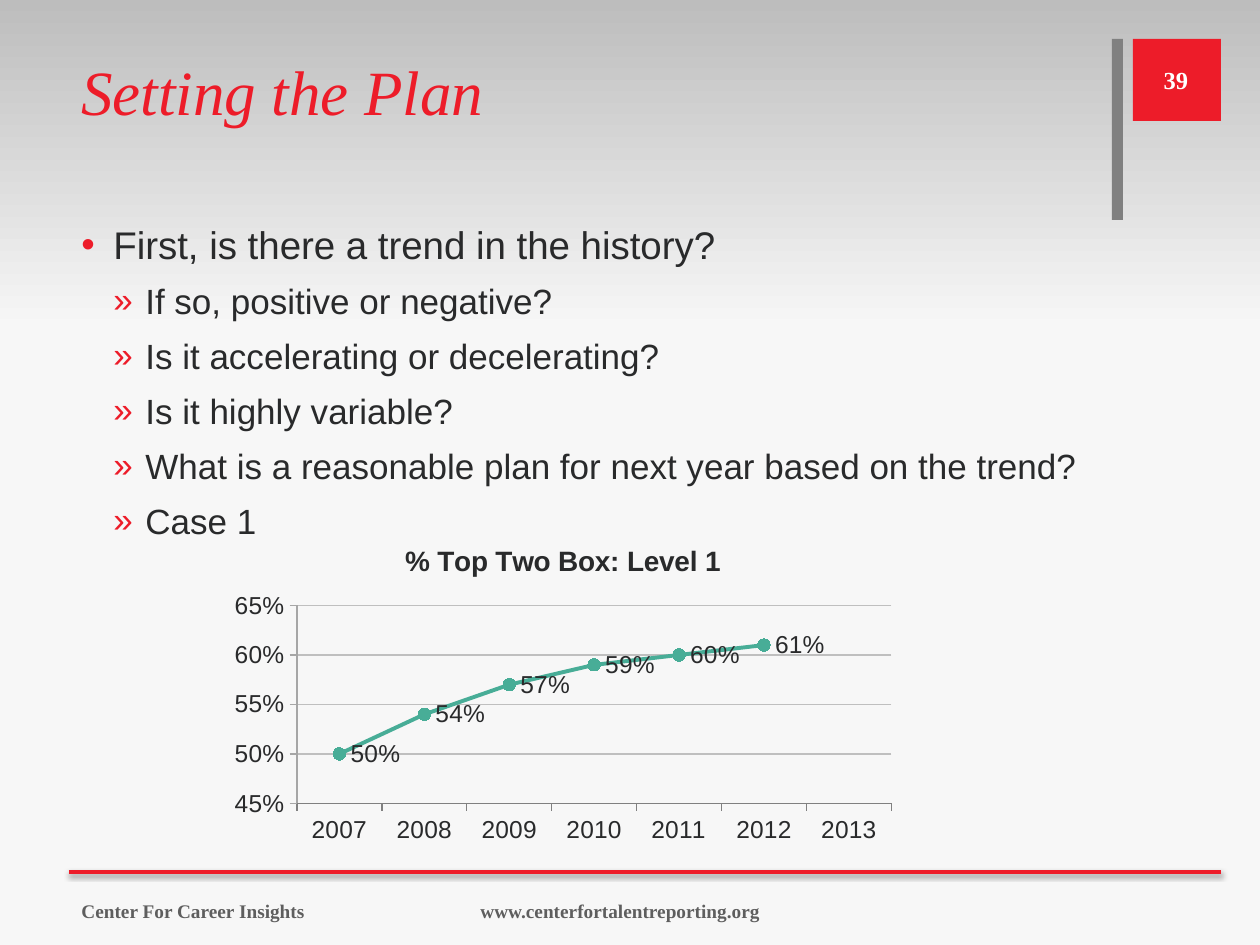
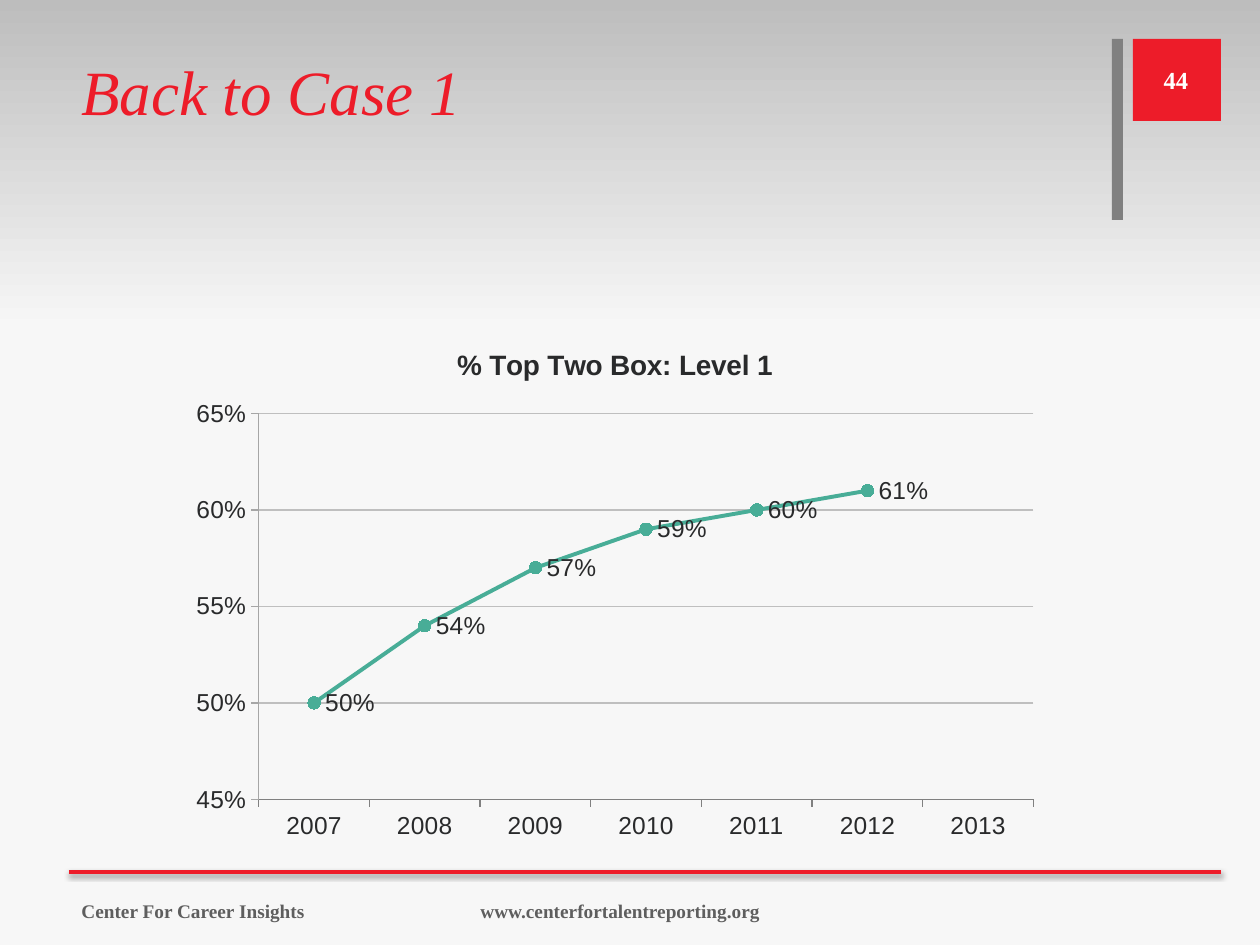
from copy import deepcopy
from lxml.etree import SubElement
from pptx import Presentation
from pptx.chart.data import CategoryChartData
from pptx.dml.color import RGBColor
from pptx.enum.chart import XL_CHART_TYPE, XL_LABEL_POSITION, XL_MARKER_STYLE, XL_TICK_MARK
from pptx.enum.shapes import MSO_CONNECTOR, MSO_SHAPE
from pptx.enum.text import MSO_ANCHOR, PP_ALIGN
from pptx.oxml.ns import qn
from pptx.util import Pt

# Content
FOOTER = "Center For Career Insights\twww.centerfortalentreporting.org"
QUESTIONS = [
    (0, "First, is there a trend in the history?"),
    (1, "If so, positive or negative?"),
    (1, "Is it accelerating or decelerating?"),
    (1, "Is it highly variable?"),
    (1, "What is a reasonable plan for next year based on the trend?"),
    (1, "Case 1"),
]
SLIDES = [
    dict(title="Setting the Plan", number="39", bullets=QUESTIONS, chart=(221, 525, 684, 325)),
    dict(title="Back to Case 1", number="44", bullets=[], chart=(179, 325, 872, 525)),
]
CHART_TITLE = "% Top Two Box: Level 1"
YEARS = ["2007", "2008", "2009", "2010", "2011", "2012", "2013"]
SCORES = [0.5, 0.54, 0.57, 0.59, 0.6, 0.61, None]

# Look
RED = RGBColor(0xED, 0x1C, 0x29)
GREY = RGBColor(0x80, 0x80, 0x80)
FOOTER_GREY = RGBColor(0x5E, 0x5E, 0x5E)
INK = RGBColor(0x29, 0x2A, 0x2B)
WHITE = RGBColor(0xFF, 0xFF, 0xFF)
TEAL = RGBColor(0x48, 0xAD, 0x97)
AXIS_GREY = RGBColor(0xA6, 0xA6, 0xA6)
GRID_GREY = RGBColor(0xBF, 0xBF, 0xBF)
BACKDROP = [(0, RGBColor(0xBD, 0xBD, 0xBD)), (0.35, RGBColor(0xF7, 0xF7, 0xF7)),
            (1, RGBColor(0xF8, 0xF8, 0xF8))]
SERIF, SANS = "Times New Roman", "Arial"
BULLETS = [("•", 22), ("»", 20)]  # mark and text size by level

# Geometry in px
WIDTH, HEIGHT = 1260, 945
LEFT, TOP, RIGHT = 69, 39, 1221
INDENT = 32
URL_TAB = 399


def px(n):
    return round(n * 914400 / 126)


def add_rect(slide, box, color=None):
    s = slide.shapes.add_shape(MSO_SHAPE.RECTANGLE, *map(px, box))
    s.shadow.inherit = False
    s.line.fill.background()
    if color is not None:
        s.fill.solid()
        s.fill.fore_color.rgb = color
    return s


def add_box(slide, box, anchor=MSO_ANCHOR.TOP):
    tf = slide.shapes.add_textbox(*map(px, box)).text_frame
    tf.word_wrap = True
    tf.vertical_anchor = anchor
    return tf


def add_text(p, text, font, size, color, bold=False, italic=False):
    p.line_spacing = 1.1
    r = p.add_run()
    r.text = text
    style_font(r.font, size, color, font, bold)
    r.font.italic = italic


def style_font(f, size, color=INK, name=SANS, bold=False):
    f.name, f.size, f.bold = name, Pt(size), bold
    f.color.rgb = color


def style_line(line, color, width):
    line.color.rgb = color
    line.width = Pt(width)


def add_backdrop(slide):
    s = add_rect(slide, (0, 0, WIDTH, HEIGHT))
    s.fill.gradient()
    stops = s._element.spPr.find(".//" + qn("a:gsLst"))
    stops.append(deepcopy(stops[-1]))
    for stop, (position, color) in zip(s.fill.gradient_stops, BACKDROP):
        stop.position = position
        stop.color.rgb = color
    s.fill.gradient_angle = 270


def add_footer_rule(slide):
    s = slide.shapes.add_connector(MSO_CONNECTOR.STRAIGHT, px(LEFT), px(872), px(RIGHT), px(872))
    style_line(s.line, RED, 2)
    effects = SubElement(s._element.spPr, qn("a:effectLst"))
    shadow = SubElement(effects, qn("a:outerShdw"), blurRad=str(Pt(3)), dist=str(Pt(1.6)),
                        dir="5400000", rotWithShape="0")
    black = SubElement(shadow, qn("a:srgbClr"), val="000000")
    SubElement(black, qn("a:alpha"), val="38000")


def add_frame(slide, title, number):
    """Backdrop, page badge, title and footer shared by all slides."""
    add_backdrop(slide)
    add_rect(slide, (1133, TOP, 88, 82), RED)
    add_rect(slide, (1112, TOP, 11, 181), GREY)
    add_footer_rule(slide)

    tf = add_box(slide, (LEFT, TOP, 1041, 181))
    add_text(tf.paragraphs[0], title, SERIF, 36, RED, italic=True)

    p = add_box(slide, (1134, 53, 84, 50), MSO_ANCHOR.MIDDLE).paragraphs[0]
    p.alignment = PP_ALIGN.CENTER
    add_text(p, number, SERIF, 14, WHITE, bold=True)

    p = add_box(slide, (LEFT, 885, 834, 50), MSO_ANCHOR.MIDDLE).paragraphs[0]
    tabs = SubElement(p._p.get_or_add_pPr(), qn("a:tabLst"))
    SubElement(tabs, qn("a:tab"), pos=str(px(URL_TAB)), algn="l")
    add_text(p, FOOTER, SERIF, 11, FOOTER_GREY, bold=True)


def add_bullets(slide, items):
    tf = add_box(slide, (LEFT, 210, 1096, 640))
    for i, (level, text) in enumerate(items):
        p = tf.add_paragraph() if i else tf.paragraphs[0]
        mark, size = BULLETS[level]
        pPr = p._p.get_or_add_pPr()
        pPr.set("marL", str(px(INDENT * (level + 1))))
        pPr.set("indent", str(-px(INDENT)))
        SubElement(SubElement(pPr, qn("a:buClr")), qn("a:srgbClr"), val=str(RED))
        SubElement(pPr, qn("a:buFont"), typeface=SANS)
        SubElement(pPr, qn("a:buChar"), char=mark)
        p.level = level
        if i:
            p.space_before = Pt(5)
        add_text(p, text, SANS, size, INK)


def add_trend_chart(slide, box):
    data = CategoryChartData(number_format="0%")
    data.categories = YEARS
    data.add_series("Series 1", SCORES)
    chart = slide.shapes.add_chart(XL_CHART_TYPE.LINE_MARKERS, *map(px, box), data).chart
    style_font(chart.font, 10)
    chart.has_legend = False

    chart.has_title = True
    r = chart.chart_title.text_frame.paragraphs[0].add_run()
    r.text = CHART_TITLE
    style_font(r.font, 16, bold=True)
    chart.chart_title.include_in_layout = False

    # Axes
    for axis, color in ((chart.category_axis, GREY), (chart.value_axis, AXIS_GREY)):
        axis.major_tick_mark = XL_TICK_MARK.OUTSIDE
        axis.minor_tick_mark = XL_TICK_MARK.NONE
        style_line(axis.format.line, color, 0.75)
        style_font(axis.tick_labels.font, 14)
    axis = chart.value_axis
    axis.minimum_scale, axis.maximum_scale, axis.major_unit = 0.45, 0.65, 0.05
    axis.tick_labels.number_format = "0%"
    axis.tick_labels.number_format_is_linked = False
    axis.has_major_gridlines = True
    style_line(axis.major_gridlines.format.line, GRID_GREY, 0.75)

    # Series with markers and labels
    plot = chart.plots[0]
    plot.vary_by_categories = False
    series = plot.series[0]
    series.smooth = False
    style_line(series.format.line, TEAL, 2.25)
    marker = series.marker
    marker.style, marker.size = XL_MARKER_STYLE.CIRCLE, 7
    marker.format.fill.solid()
    marker.format.fill.fore_color.rgb = TEAL
    style_line(marker.format.line, TEAL, 0.75)
    labels = series.data_labels
    labels.show_value = True
    labels.position = XL_LABEL_POSITION.RIGHT
    labels.number_format = "0%"
    labels.number_format_is_linked = False
    style_font(labels.font, 14)


def main():
    prs = Presentation()
    prs.slide_width, prs.slide_height = px(WIDTH), px(HEIGHT)
    for content in SLIDES:
        slide = prs.slides.add_slide(prs.slide_layouts[6])
        add_frame(slide, content["title"], content["number"])
        if content["bullets"]:
            add_bullets(slide, content["bullets"])
        add_trend_chart(slide, content["chart"])
    prs.save("out.pptx")


if __name__ == "__main__":
    main()
